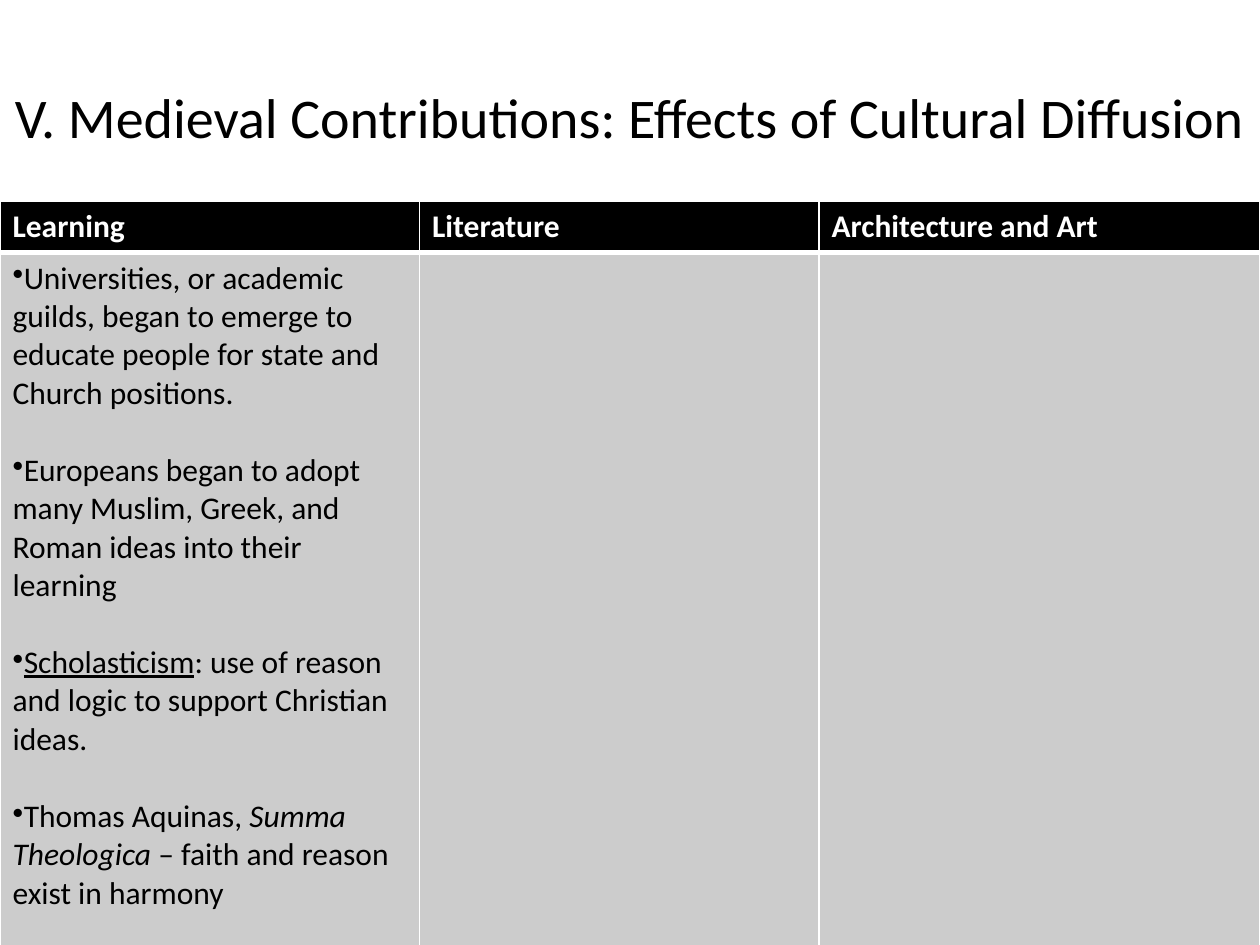
from lxml.etree import SubElement
from pptx import Presentation
from pptx.dml.color import RGBColor
from pptx.enum.text import MSO_ANCHOR, PP_ALIGN
from pptx.oxml.ns import qn
from pptx.util import Inches, Pt

BLACK = RGBColor(0x00, 0x00, 0x00)
WHITE = RGBColor(0xFF, 0xFF, 0xFF)
GRAY = RGBColor(0xCC, 0xCC, 0xCC)
FONT = "Calibri"

TITLE = "V. Medieval Contributions: Effects of Cultural Diffusion"
HEADINGS = ["Learning", "Literature", "Architecture and Art"]
COLUMN_WIDTHS = [3.33, 3.17, 3.5]
ROW_HEIGHTS = [0.4, 5.5]

# Each bullet is a list of (text, style) runs
LEARNING = [
    [("Universities, or academic guilds, began to emerge to educate people "
      "for state and Church positions.", None)],
    [("Europeans began to adopt many Muslim, Greek, and Roman ideas into "
      "their learning", None)],
    [("Scholasticism", "underline"),
     (": use of reason and logic to support Christian ideas.", None)],
    [("Thomas Aquinas, ", None), ("Summa Theologica", "italic"),
     (" – faith and reason exist in harmony", None)],
]


def add_run(para, text, size, color, bold=False, style=None):
    span = para.add_run()
    span.text = text
    font = span.font
    font.name, font.size, font.bold = FONT, Pt(size), bold
    font.color.rgb = color
    if style:
        setattr(font, style, True)


def add_bullet(para):
    SubElement(para._p.get_or_add_pPr(), qn("a:buChar"), char="•")


def format_cell(cell, fill, bottom_width):
    """Give the cell white borders and a plain fill."""
    properties = cell._tc.get_or_add_tcPr()
    widths = {"lnL": 1, "lnR": 1, "lnT": 1, "lnB": bottom_width}
    for side, width in widths.items():
        line = SubElement(properties, qn(f"a:{side}"), w=str(Pt(width)))
        solid = SubElement(line, qn("a:solidFill"))
        SubElement(solid, qn("a:srgbClr"), val=str(WHITE))
    cell.fill.solid()
    cell.fill.fore_color.rgb = fill


def add_title(page, left, top, width, height):
    box = page.shapes.title
    box.left, box.top, box.width, box.height = left, top, width, height
    box.text_frame.vertical_anchor = MSO_ANCHOR.MIDDLE
    para = box.text_frame.paragraphs[0]
    para.alignment = PP_ALIGN.CENTER
    add_run(para, TITLE, 32, BLACK)


def add_contributions_table(page, left, top, width, height):
    table = page.shapes.add_table(
        len(ROW_HEIGHTS), len(HEADINGS), left, top, width, height).table
    for row, share in zip(table.rows, ROW_HEIGHTS):
        row.height = int(height * share / sum(ROW_HEIGHTS))
    for column, share in zip(table.columns, COLUMN_WIDTHS):
        column.width = int(width * share / sum(COLUMN_WIDTHS))

    for index, heading in enumerate(HEADINGS):
        header = table.cell(0, index)
        format_cell(header, BLACK, 3)
        add_run(header.text_frame.paragraphs[0], heading, 18, WHITE, bold=True)
        format_cell(table.cell(1, index), GRAY, 1)

    frame = table.cell(1, 0).text_frame
    for index, runs in enumerate(LEARNING):
        para = frame.add_paragraph() if index else frame.paragraphs[0]
        if index:
            para.space_before = Pt(22)
        add_bullet(para)
        for text, style in runs:
            add_run(para, text, 18, BLACK, style=style)


def main():
    deck = Presentation()
    deck.slide_width, deck.slide_height = Inches(10), Inches(7.5)
    page = deck.slides.add_slide(deck.slide_layouts[5])
    add_title(page, Inches(0), Inches(0.3), Inches(10), Inches(1.25))
    add_contributions_table(
        page, Inches(0), Inches(1.6), Inches(10), Inches(5.9))
    deck.save("out.pptx")


if __name__ == "__main__":
    main()
